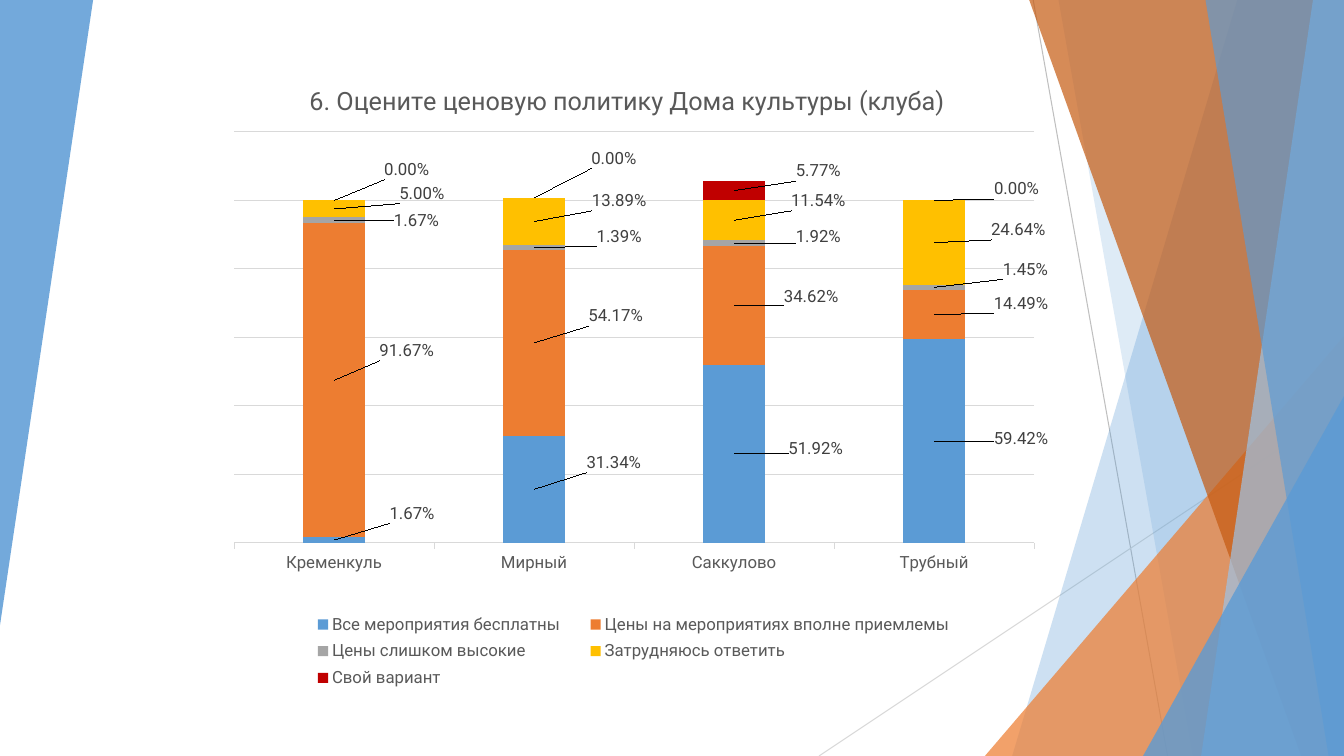
"""Builds a slide with a stacked column chart of opinions on club prices."""
from lxml import etree
from pptx import Presentation
from pptx.chart.data import CategoryChartData
from pptx.dml.color import RGBColor
from pptx.enum.chart import XL_CHART_TYPE, XL_LEGEND_POSITION, XL_TICK_MARK
from pptx.enum.shapes import MSO_CONNECTOR, MSO_SHAPE
from pptx.oxml import parse_xml
from pptx.oxml.ns import nsdecls, qn
from pptx.util import Pt

STACKED = XL_CHART_TYPE.COLUMN_STACKED
BOTTOM = XL_LEGEND_POSITION.BOTTOM
OUTSIDE, NO_TICK = XL_TICK_MARK.OUTSIDE, XL_TICK_MARK.NONE
STRAIGHT, TRIANGLE = MSO_CONNECTOR.STRAIGHT, MSO_SHAPE.ISOSCELES_TRIANGLE
PAGE_WIDTH, PAGE_HEIGHT = 960, 540
CHART_LEFT, CHART_TOP, CHART_WIDTH, CHART_HEIGHT = 134.6, 40.3, 640, 477.4
BLUE, ORANGE, GRID = "5B9BD5", "ED7D31", "D9D9D9"
PERCENT = "0.00%"


def paint(colour_format, colour, opacity=100):
    """Set a colour and, below 100 percent, its opacity."""
    fill = colour_format.fill
    fill.solid()
    fill.fore_color.rgb = RGBColor.from_string(colour)
    if opacity < 100:
        tint = colour_format._element.spPr.find(qn("a:solidFill"))[0]
        etree.SubElement(tint, qn("a:alpha")).set("val", str(opacity * 1000))


def layout(**values):
    """Return a manual chart layout with the given settings."""
    parts = "".join(f'<c:{name} val="{value}"/>' for name, value in values.items())
    return parse_xml(f'<c:layout {nsdecls("c")}><c:manualLayout>{parts}</c:manualLayout></c:layout>')


deck = Presentation()
deck.slide_width, deck.slide_height = Pt(PAGE_WIDTH), Pt(PAGE_HEIGHT)
page = deck.slides.add_slide(deck.slide_layouts[6])

for x1, y1, x2, y2, colour in [(738, 0, 834, 540, "BFBFBF"), (960, 290, 585, 540, GRID)]:
    line = page.shapes.add_connector(STRAIGHT, Pt(x1), Pt(y1), Pt(x2), Pt(y2))
    line.line.color.rgb = RGBColor.from_string(colour)
    line.line.width = Pt(0.75)
    etree.SubElement(line._element.spPr, qn("a:effectLst"))

bands = [
    ("band", (884, 723), BLUE, 30),
    ("band", (756, 852), BLUE, 20),
    ("triangle", (703.5, 240, 256.5, 300, 0), ORANGE, 72),
    ("band", (735, 929.5), "C55A11", 70),
    ("band", (938, 858), "9DC3E6", 70),
    ("band", (861, 949), BLUE, 65),
    ("triangle", (816.5, 283, 143.5, 257, 0), BLUE, 80),
    ("triangle", (0, 0, 66.5, 446.5, 180), BLUE, 85),
]
for kind, place, colour, opacity in bands:
    if kind == "band":
        top_x, bottom_x = place
        outline = page.shapes.build_freeform(Pt(top_x), Pt(-0.5))
        corners = [(PAGE_WIDTH, -0.5), (PAGE_WIDTH, PAGE_HEIGHT), (bottom_x, PAGE_HEIGHT)]
        outline.add_line_segments([(Pt(x), Pt(y)) for x, y in corners])
        shape = outline.convert_to_shape()
    else:
        left, top, width, height, turn = place
        shape = page.shapes.add_shape(TRIANGLE, Pt(left), Pt(top), Pt(width), Pt(height))
        shape.adjustments[0] = 1.0
        shape.rotation = turn
    paint(shape, colour, opacity)
    shape.line.fill.background()
    shape.shadow.inherit = False

answers = [
    ("Все мероприятия бесплатны", BLUE, (0.0167, 0.3134, 0.5192, 0.5942),
     [(56, -19), (57, -19), (58, -4), (62, -2)]),
    ("Цены на мероприятиях вполне приемлемы", ORANGE, (0.9167, 0.5417, 0.3462, 0.1449),
     [(52, -21), (58, -19), (55, -6), (62, -8)]),
    ("Цены слишком высокие", "A5A5A5", (0.0167, 0.0139, 0.0192, 0.0145),
     [(59, 0), (61, -8), (60, -5), (65, -13)]),
    ("Затрудняюсь ответить", "FFC000", (0.05, 0.1389, 0.1154, 0.2464),
     [(63, -11), (61, -15), (60, -14), (60, -9)]),
    ("Свой вариант", "C00000", (0, 0, 0.0577, 0),
     [(52, -22), (57, -28), (60, -14), (59, -8)]),
]
data = CategoryChartData(number_format=PERCENT)
data.categories = ["Кременкуль", "Мирный", "Саккулово", "Трубный"]
for name, colour, values, offsets in answers:
    data.add_series(name, values)
chart = page.shapes.add_chart(STACKED, Pt(CHART_LEFT), Pt(CHART_TOP),
                              Pt(CHART_WIDTH), Pt(CHART_HEIGHT), data).chart
chart.font.name = "Roboto"
chart.font.size = Pt(12)
chart.font.color.rgb = RGBColor.from_string("595959")

chart.has_title = True
title = chart.chart_title
title.include_in_layout = False
para = title.text_frame.paragraphs[0]
para.text = "6. Оцените ценовую политику Дома культуры (клуба)"
para.font.name = "Roboto"
para.font.size = Pt(18)
para.font.bold = False
para.font.color.rgb = RGBColor.from_string("595959")

chart.has_legend = True
chart.legend.position = BOTTOM
chart.legend.include_in_layout = False

categories, scale = chart.category_axis, chart.value_axis
categories.major_tick_mark, categories.minor_tick_mark = OUTSIDE, NO_TICK
scale.visible = False
scale.minimum_scale, scale.maximum_scale, scale.major_unit = 0, 1.2, 0.2
scale.tick_labels.number_format = PERCENT
for line in (categories.format.line, scale.major_gridlines.format.line):
    line.color.rgb = RGBColor.from_string(GRID)
    line.width = Pt(0.75)

plot = chart.plots[0]
plot.gap_width, plot.overlap = 219, 100
plot.vary_by_categories = False
for series, (name, colour, values, offsets) in zip(plot.series, answers):
    paint(series.format, colour)
    labels = series.data_labels
    labels.show_value = True
    labels.number_format, labels.number_format_is_linked = PERCENT, False
    fonts = [labels.font] + [series.points[i].data_label.font for i in range(len(offsets))]
    for font in fonts:
        font.name = "Roboto"
        font.size = Pt(12)
        font.color.rgb = RGBColor.from_string("404040")
    for label, (dx, dy) in zip(series._element.iter(qn("c:dLbl")), offsets):
        label.insert(1, layout(x=round(dx / CHART_WIDTH, 3), y=round(dy / CHART_HEIGHT, 3)))

placed_parts = [
    ("c:title", "c:tx", dict(xMode="edge", yMode="edge", x=0.13, y=0.035)),
    ("c:legend", "c:legendPos", dict(xMode="edge", yMode="edge", x=0.117, y=0.825, w=0.76, h=0.13)),
    ("c:plotArea", None, dict(layoutTarget="inner", xMode="edge", yMode="edge",
                              x=0.051, y=0.113, w=0.893, h=0.615)),
]
for part_name, before, settings in placed_parts:
    part = chart._chartSpace.chart.find(qn(part_name))
    for old_layout in part.findall(qn("c:layout")):
        part.remove(old_layout)
    position = 0 if before is None else part.index(part.find(qn(before))) + 1
    part.insert(position, layout(**settings))

deck.save("out.pptx")
